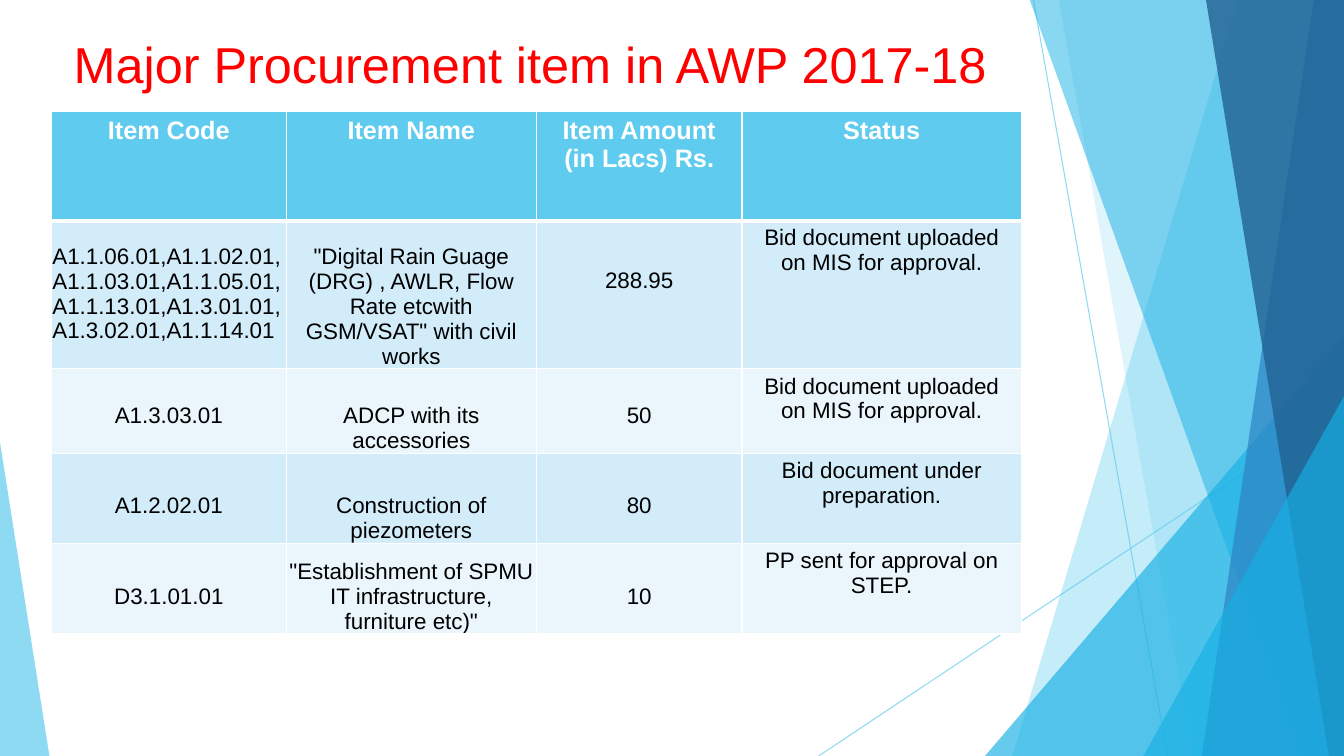
from dataclasses import dataclass
from lxml.etree import SubElement
from pptx import Presentation
from pptx.dml.color import RGBColor
from pptx.enum.shapes import MSO_CONNECTOR, MSO_SHAPE
from pptx.enum.text import MSO_ANCHOR, MSO_AUTO_SIZE, PP_ALIGN
from pptx.oxml.ns import qn
from pptx.util import Emu, Pt

PX = 9144
FONT = "Arial"
LINE_HEIGHT = 25
BOTTOM, TOP_EDGE = 750, -1
COLORS = {
    "sky": "5FCBEF", "cyan": "17B0E4", "blue": "2E83C3", "navy": "226292",
    "band_dark": "D2ECF9", "band_light": "EAF6FC",
    "white": "FFFFFF", "black": "000000", "title": "FF0000",
}


@dataclass(frozen=True)
class Ray:
    start: tuple[int, int]
    end: tuple[int, int]


@dataclass(frozen=True)
class Facet:
    points: tuple[tuple[int, int], ...]
    color: str
    opacity: int


@dataclass(frozen=True)
class Triangle:
    left: int
    top: int
    width: int
    apex: float
    color: str
    opacity: int


@dataclass(frozen=True)
class Item:
    code: str
    name: str
    amount: str
    status: str
    height: int
    code_lift: int = 1
    amount_lift: int = 1


def facet(top_left: int, top_right: int, bottom_right: int, bottom_left: int,
          color: str, opacity: int) -> Facet:
    return Facet(((top_left, TOP_EDGE), (top_right, TOP_EDGE),
                  (bottom_right, BOTTOM), (bottom_left, BOTTOM)), color, opacity)


DECORATION = (
    Ray((1025, 0), (1158, 750)),
    Ray((1333, 403), (812, 750)),
    facet(1228, 1333, 1333, 1004, "sky", 36),
    facet(1050, 1333, 1333, 1183, "sky", 20),
    Triangle(977, 333, 356, 1, "cyan", 66),
    facet(1021, 1333, 1333, 1291, "cyan", 50),
    facet(1303, 1333, 1333, 1192, "blue", 70),
    facet(1196, 1333, 1333, 1318, "navy", 80),
    Triangle(1134, 393, 199, 1, "cyan", 66),
    Triangle(0, 439, 49, 0, "sky", 70),
)
HEADERS = ("Item Code", "Item Name", "Item Amount\n(in Lacs) Rs.", "Status")
HEADER_HEIGHT = 108
COLUMN_WIDTHS = (233, 248, 204, 277)
ITEMS = (
    Item("A1.1.06.01,A1.1.02.01,A1.1.03.01,A1.1.05.01,"
         "A1.1.13.01,A1.3.01.01,A1.3.02.01,A1.1.14.01",
         '"Digital Rain Guage (DRG) , AWLR, Flow Rate etcwith GSM/VSAT" with civil works',
         "288.95", "Bid document uploaded on MIS for approval.", 147, amount_lift=3),
    Item("A1.3.03.01", "ADCP with its accessories", "50",
         "Bid document uploaded on MIS for approval.", 84),
    Item("A1.2.02.01", "Construction of piezometers", "80",
         "Bid document under preparation.", 89),
    Item("D3.1.01.01", '"Establishment of SPMU IT infrastructure, furniture etc)"', "10",
         "PP sent for approval on STEP.", 90),
)


def px(value: float) -> Emu:
    return Emu(round(value * PX))


def rgb(name: str) -> RGBColor:
    return RGBColor.from_string(COLORS[name])


def set_opacity(element, opacity: int) -> None:
    color = next(element.iter(qn("a:srgbClr")))
    SubElement(color, qn("a:alpha")).set("val", str(opacity * 1000))


def finish_shape(shape, color: str, opacity: int) -> None:
    shape.shadow.inherit = False
    shape.fill.solid()
    shape.fill.fore_color.rgb = rgb(color)
    set_opacity(shape.element.spPr, opacity)
    shape.line.fill.background()


def draw_decoration(slide, part: Ray | Facet | Triangle) -> None:
    if isinstance(part, Ray):
        connector = slide.shapes.add_connector(
            MSO_CONNECTOR.STRAIGHT, *map(px, part.start + part.end))
        connector.line.color.rgb = rgb("sky")
        connector.line.width = Pt(0.75)
        set_opacity(connector.element.spPr, 70)
        SubElement(connector.element.spPr, qn("a:effectLst"))
        return
    if isinstance(part, Facet):
        builder = slide.shapes.build_freeform(*part.points[0], scale=PX)
        builder.add_line_segments(part.points[1:], close=True)
        shape = builder.convert_to_shape()
    else:
        shape = slide.shapes.add_shape(
            MSO_SHAPE.ISOSCELES_TRIANGLE, px(part.left), px(part.top),
            px(part.width), px(BOTTOM - part.top))
        shape.adjustments[0] = part.apex
    finish_shape(shape, part.color, part.opacity)


def format_text(text_frame, size: int, color: str, bold: bool, align: PP_ALIGN) -> None:
    for paragraph in text_frame.paragraphs:
        paragraph.alignment = align
        for run in paragraph.runs:
            run.font.name = FONT
            run.font.size = Pt(size)
            run.font.bold = bold
            run.font.color.rgb = rgb(color)


def set_borders(cell, bottom_width: int) -> None:
    properties = cell._tc.get_or_add_tcPr()
    for index, side in enumerate(("lnL", "lnR", "lnT", "lnB")):
        border = properties.makeelement(qn(f"a:{side}"), {})
        border.set("w", str(Pt(bottom_width if side == "lnB" else 1)))
        fill = SubElement(border, qn("a:solidFill"))
        SubElement(fill, qn("a:srgbClr")).set("val", COLORS["white"])
        properties.insert(index, border)


def fill_cell(cell, text: str, fill: str, header: bool = False,
              align: PP_ALIGN = PP_ALIGN.CENTER) -> None:
    cell.text_frame.text = text
    format_text(cell.text_frame, 18 if header else 16,
                "white" if header else "black", header, align)
    cell.fill.solid()
    cell.fill.fore_color.rgb = rgb(fill)
    set_borders(cell, 3 if header else 1)


def anchor_bottom(cell, lifted_lines: int) -> None:
    cell.vertical_anchor = MSO_ANCHOR.BOTTOM
    cell.margin_left = cell.margin_right = cell.margin_top = px(1)
    cell.margin_bottom = px(lifted_lines * LINE_HEIGHT)


def draw_table(slide) -> None:
    heights = (HEADER_HEIGHT, *(item.height for item in ITEMS))
    table = slide.shapes.add_table(
        len(heights), len(HEADERS), px(51), px(111),
        px(sum(COLUMN_WIDTHS)), px(sum(heights))).table
    for column, width in zip(table.columns, COLUMN_WIDTHS):
        column.width = px(width)
    for row, height in zip(table.rows, heights):
        row.height = px(height)
    for column, header in enumerate(HEADERS):
        fill_cell(table.cell(0, column), header, "sky", header=True)
    for row, item in enumerate(ITEMS, start=1):
        fill = "band_dark" if row % 2 else "band_light"
        for column, text in enumerate((item.code, item.name, item.amount, item.status)):
            wrapped_codes = column == 0 and "," in text
            fill_cell(table.cell(row, column), text, fill,
                      align=PP_ALIGN.LEFT if wrapped_codes else PP_ALIGN.CENTER)
        for column, lift in enumerate((item.code_lift, 0, item.amount_lift)):
            anchor_bottom(table.cell(row, column), lift)


def draw_title(slide) -> None:
    title = slide.shapes.title
    title.left, title.top, title.width, title.height = map(px, (63, 24, 940, 88))
    text_frame = title.text_frame
    text_frame.text = "Major Procurement item in AWP 2017-18"
    text_frame.word_wrap = True
    text_frame.auto_size = MSO_AUTO_SIZE.NONE
    text_frame.vertical_anchor = MSO_ANCHOR.TOP
    text_frame.margin_top = px(9)
    format_text(text_frame, 36, "title", False, PP_ALIGN.LEFT)


def main() -> None:
    presentation = Presentation()
    presentation.slide_width, presentation.slide_height = px(1333), px(750)
    slide = presentation.slides.add_slide(presentation.slide_layouts[5])
    for part in DECORATION:
        draw_decoration(slide, part)
    draw_title(slide)
    draw_table(slide)
    presentation.save("out.pptx")


if __name__ == "__main__":
    main()
